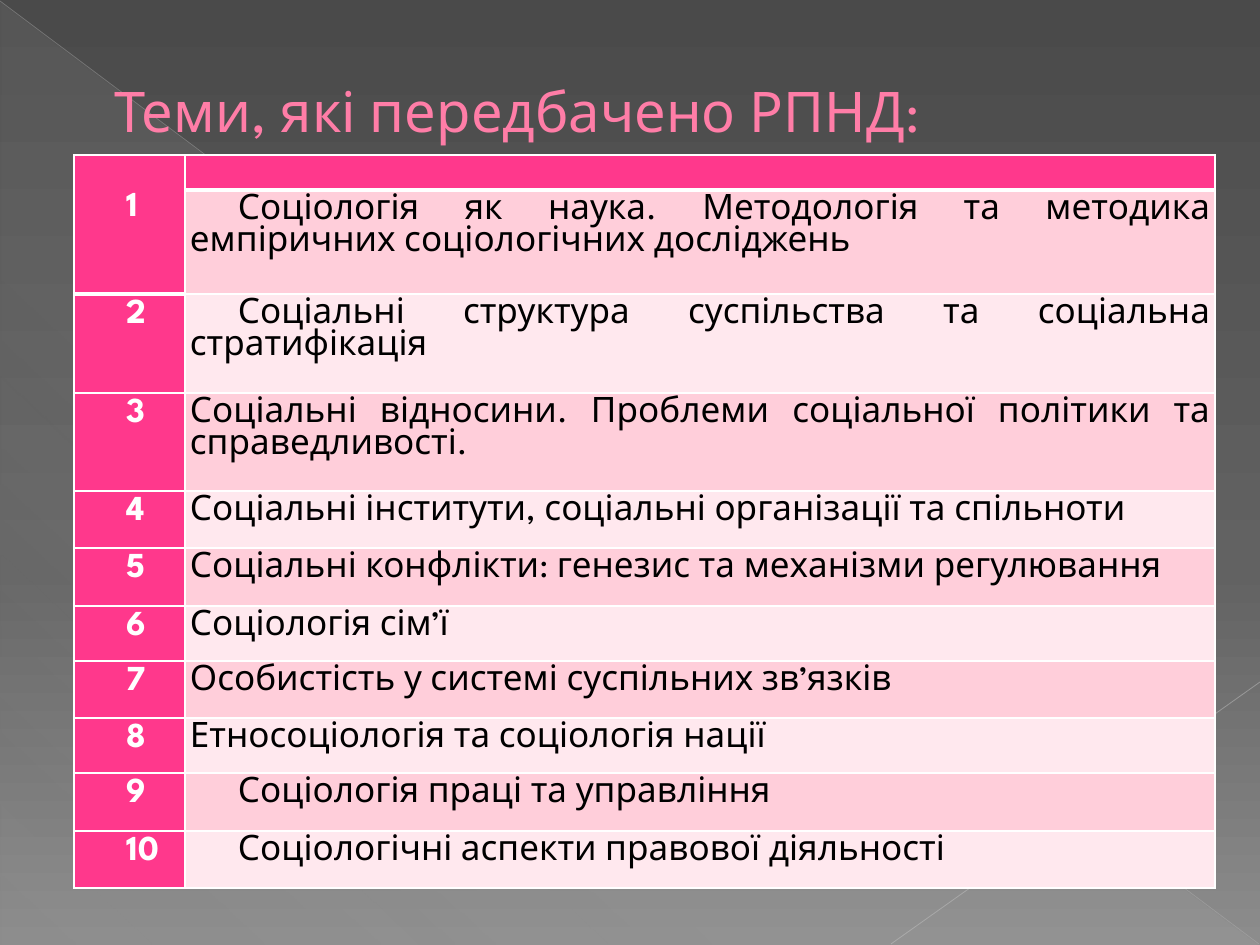
from lxml import etree
from pptx import Presentation
from pptx.dml.color import RGBColor
from pptx.enum.shapes import MSO_CONNECTOR, MSO_SHAPE
from pptx.enum.text import MSO_ANCHOR, PP_ALIGN
from pptx.oxml import parse_xml
from pptx.oxml.ns import qn
from pptx.util import Pt

STRAIGHT = MSO_CONNECTOR.STRAIGHT
TRIANGLE = MSO_SHAPE.RIGHT_TRIANGLE
MIDDLE = MSO_ANCHOR.MIDDLE
LEFT, JUSTIFY = PP_ALIGN.LEFT, PP_ALIGN.JUSTIFY
NS = 'xmlns:a="http://schemas.openxmlformats.org/drawingml/2006/main"'
FONT = "League Spartan"
C = {"title": "FF7DA7", "head": "FF388C", "odd": "FFCEDA", "even": "FFE8EE",
     "white": "FFFFFF", "black": "000000"}

TITLE = "Теми, які передбачено РПНД:"
TOPICS = [
    ("Соціологія як наука. Методологія та методика емпіричних соціологічних досліджень", JUSTIFY, True),
    ("Соціальні структура суспільства та соціальна стратифікація", JUSTIFY, True),
    ("Соціальні відносини. Проблеми соціальної політики та справедливості.", JUSTIFY, False),
    ("Соціальні інститути, соціальні організації та спільноти", JUSTIFY, False),
    ("Соціальні конфлікти: генезис та механізми регулювання", JUSTIFY, False),
    ("Соціологія сім’ї", JUSTIFY, False),
    ("Особистість у системі суспільних зв’язків", JUSTIFY, False),
    ("Етносоціологія та соціологія нації", JUSTIFY, False),
    ("Соціологія праці та управління", LEFT, True),
    ("Соціологічні аспекти правової діяльності", LEFT, True),
]
COLS = [111, 1030]
ROWS = [35, 104, 99, 98, 57, 58, 55, 57, 55, 58, 57]
INSET, INDENT, LINE = 5, 48, 32
BACKGROUND = [(0, "4A4A4A", 100), (60, "626262", 100), (100, "8C8C8C", 100)]
SHEEN = [(0, "D2D2D2", 10), (70, "D2D2D2", 8), (100, "D2D2D2", 1)]
RAYS = [((0, 1, 1259, 944), "BFBFBF", 0.39, 35),
        ((1260, 682, 891, 944), "C6C6C6", 0.47, 45)]


def px(n):
    return round(n * 914400 / 126)


def rgb(name):
    return RGBColor.from_string(C[name])


def gradient(stops, angle):
    gs = "".join(f'<a:gs pos="{pos * 1000}"><a:srgbClr val="{color}">'
                 f'<a:alpha val="{alpha * 1000}"/></a:srgbClr></a:gs>'
                 for pos, color, alpha in stops)
    return parse_xml(f'<a:gradFill {NS} rotWithShape="1"><a:gsLst>{gs}</a:gsLst>'
                     f'<a:lin ang="{angle * 60000}" scaled="0"/></a:gradFill>')


def set_gradient(fill, owner, stops, angle):
    fill.solid()
    old = next(owner.iter(qn("a:solidFill")))
    old.getparent().replace(old, gradient(stops, angle))


def add_ray(s, ends, color, width, alpha):
    ray = s.shapes.add_connector(STRAIGHT, *map(px, ends))
    ray.line.color.rgb = RGBColor.from_string(color)
    ray.line.width = Pt(width)
    clr = next(ray._element.spPr.iter(qn("a:srgbClr")))
    etree.SubElement(clr, qn("a:alpha"), val=str(alpha * 1000))
    etree.SubElement(ray._element.spPr, qn("a:effectLst"))


def style_cell(cell, fill, top=1, bottom=1):
    cell.margin_left = cell.margin_right = px(INSET)
    cell.margin_top = cell.margin_bottom = px(INSET)
    cell.fill.solid()
    cell.fill.fore_color.rgb = rgb(fill)
    tcPr = cell._tc.get_or_add_tcPr()
    for i, (side, width) in enumerate(zip("LRTB", (1, 1, top, bottom))):
        tcPr.insert(i, parse_xml(
            f'<a:ln{side} {NS} w="{width * 12700}"><a:solidFill>'
            f'<a:srgbClr val="{C["white"]}"/></a:solidFill></a:ln{side}>'))


def write(cell, text, color, align, indented, bold=False):
    p = cell.text_frame.paragraphs[0]
    p.alignment = align
    if indented:
        p._p.get_or_add_pPr().set("indent", str(px(INDENT)))
    r = p.add_run()
    r.text = text
    r.font.size, r.font.bold, r.font.name = Pt(20), bold, FONT
    r.font.color.rgb = rgb(color)


def add_title(s):
    title = s.shapes.title
    title.left, title.top, title.width, title.height = map(px, (35, 66, 1134, 89))
    tf = title.text_frame
    tf.vertical_anchor = MIDDLE
    p = tf.paragraphs[0]
    p.alignment = LEFT
    p._p.get_or_add_pPr().set("marL", str(px(67)))
    r = p.add_run()
    r.text = TITLE
    r.font.size = Pt(32)
    r.font.color.rgb = rgb("title")
    r._r.get_or_add_rPr().append(parse_xml(
        f'<a:effectLst {NS}><a:outerShdw blurRad="38100" dist="38100" dir="2700000">'
        '<a:srgbClr val="000000"><a:alpha val="50000"/></a:srgbClr>'
        '</a:outerShdw></a:effectLst>'))
    r.font.name = FONT
    s.shapes._spTree.append(title._element)


def add_topics(s):
    frame = s.shapes.add_table(len(ROWS), len(COLS), px(74), px(155),
                               px(sum(COLS)), px(sum(ROWS)))
    table = frame.table
    for col, width in zip(table.columns, COLS):
        col.width = px(width)
    for row, height in zip(table.rows, ROWS):
        row.height = px(height)

    first, blank = table.cell(0, 0), table.cell(0, 1)
    first.merge(table.cell(1, 0))
    style_cell(first, "head", bottom=3)
    first.margin_top = px(INSET + LINE)
    style_cell(blank, "head", bottom=3)
    blank.margin_top = blank.margin_bottom = 0
    etree.SubElement(blank.text_frame.paragraphs[0]._p, qn("a:endParaRPr"), sz="1000")

    for n, (topic, align, indented) in enumerate(TOPICS, 1):
        number, body = table.cell(n, 0), table.cell(n, 1)
        style_cell(number, "head", top=3 if n == 2 else 1, bottom=3 if n == 1 else 1)
        style_cell(body, "odd" if n % 2 else "even", top=3 if n == 1 else 1)
        write(first if n == 1 else number, str(n), "white", JUSTIFY, True, True)
        write(body, topic, "black", align, indented)


def main():
    prs = Presentation()
    prs.slide_width, prs.slide_height = px(1260), px(945)
    s = prs.slides.add_slide(prs.slide_layouts[5])
    set_gradient(s.background.fill, s._element, BACKGROUND, 90)

    sheen = s.shapes.add_shape(TRIANGLE, *map(px, (1, 2, 1258, 943)))
    sheen.shadow.inherit = False
    sheen.line.fill.background()
    set_gradient(sheen.fill, sheen._element.spPr, SHEEN, 133)
    for ray in RAYS:
        add_ray(s, *ray)

    add_title(s)
    add_topics(s)
    prs.save("out.pptx")


if __name__ == "__main__":
    main()
